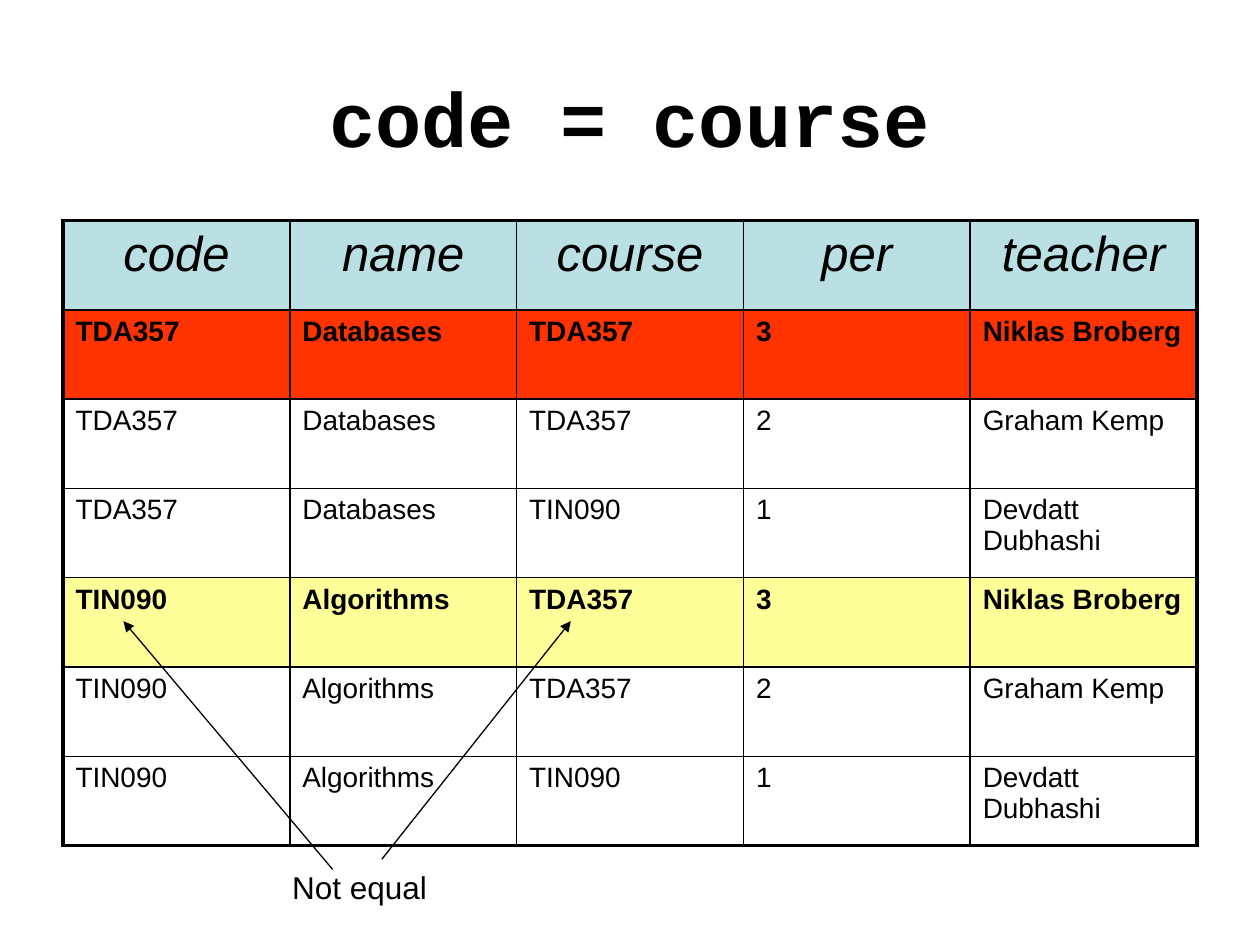
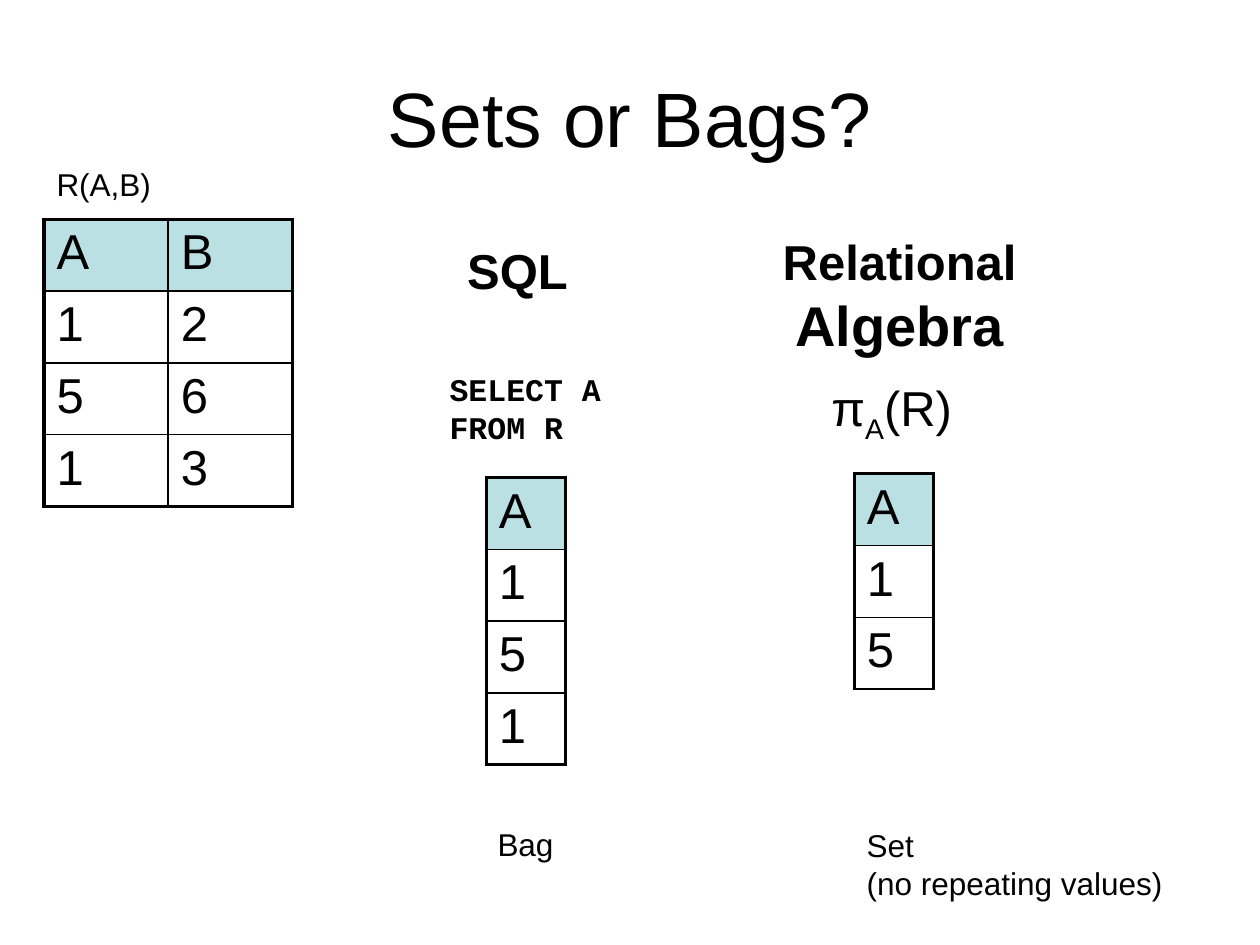
import pptx
import pptx.util
import pptx.dml.color
import pptx.enum.text
import pptx.enum.shapes
import pptx.oxml.ns
import lxml.etree

RGB = pptx.dml.color.RGBColor
ALIGN = pptx.enum.text.PP_ALIGN
ANCHOR = pptx.enum.text.MSO_ANCHOR

# Shared look
BLACK = RGB(0x00, 0x00, 0x00)
WHITE = RGB(0xFF, 0xFF, 0xFF)
TEAL = RGB(0xBB, 0xE0, 0xE3)
RED = RGB(0xFF, 0x33, 0x00)
YELLOW = RGB(0xFF, 0xFF, 0x99)
SANS, MONO = "Arial", "Courier New"
HEAVY, THIN = 2.25, 1

# Grid: 100 columns by 75 rows of square units
WIDE, HIGH = pptx.util.Inches(10), pptx.util.Inches(7.5)
UNIT = WIDE // 100
TITLE = (5, 3, 90, 12.5)

# Slide 1: every course paired with every teaching period
HEAD = ["code", "name", "course", "per", "teacher"]
COURSES = [("TDA357", "Databases"), ("TIN090", "Algorithms")]
GIVEN = [
    ("TDA357", "3", "Niklas Broberg"),
    ("TDA357", "2", "Graham Kemp"),
    ("TIN090", "1", "Devdatt Dubhashi"),
]
PAIRS = [HEAD] + [[*course, *given] for course in COURSES for given in GIVEN]
MARKS = {1: RED, 4: YELLOW}
ARROWS = [((26.4, 69), (9.8, 49.3)), ((30.3, 68.2), (45.3, 49.3))]

# Slide 2: tables as (left, top, column width, rows, bottom line)
LISTS = [
    (3.5, 17.4, 9.85, ["AB", "12", "56", "13"], HEAVY),
    (38.6, 37.9, 6.3, ["A", "1", "5", "1"], HEAVY),
    (67.8, 37.6, 6.3, ["A", "1", "5"], THIN),
]
# Labels as (box, paragraphs of runs, look)
LABELS = [
    ((3.5, 12.6, 9.5, 4), [["R(A,B)"]], {}),
    ((34.7, 28.9, 14, 7.1), [["SELECT A\vFROM R"]], {"font": MONO, "bold": True}),
    ((65, 29.5, 11.9, 5.7), [["π", ("A", {"base": -25}), "(R)"]], {"size": 28}),
    ((38.5, 65, 6.5, 4), [["Bag"]], {}),
    ((67.8, 65.1, 25.7, 7.1), [["Set"], ["(no repeating values)"]], {}),
    ((36.1, 18.6, 10.1, 5.7), [["SQL"]], {"size": 28, "bold": True}),
    ((61, 17.9, 20.8, 11.1), [["Relational"], [("Algebra", {"size": 32})]],
     {"size": 28, "bold": True, "align": ALIGN.CENTER}),
]


def grid(*spans):
    return [round(span * UNIT) for span in spans]


def style(run, font=SANS, size=18, bold=False, slant=False, base=0):
    face = run.font
    face.name, face.size = font, pptx.util.Pt(size)
    face.bold, face.italic = bold, slant
    face.color.rgb = BLACK
    if base:
        run._r.get_or_add_rPr().set("baseline", str(base * 1000))


def write(frame, paras, align=ALIGN.LEFT, **look):
    for i, parts in enumerate(paras):
        para = frame.add_paragraph() if i else frame.paragraphs[0]
        para.alignment = align
        for part in parts:
            text, extra = (part, {}) if isinstance(part, str) else part
            for j, line in enumerate(text.split("\v")):
                if j:
                    para.add_line_break()
                run = para.add_run()
                run.text = line
                style(run, **{**look, **extra})


def label(slide, box, paras, **look):
    frame = slide.shapes.add_textbox(*grid(*box)).text_frame
    frame.word_wrap = False
    frame.auto_size = pptx.enum.text.MSO_AUTO_SIZE.SHAPE_TO_FIT_TEXT
    write(frame, paras, **look)


def title(slide, text, **look):
    frame = slide.shapes.add_textbox(*grid(*TITLE)).text_frame
    frame.word_wrap = True
    frame.vertical_anchor = ANCHOR.MIDDLE
    write(frame, [[text]], align=ALIGN.CENTER, size=44, **look)


def border(cell, widths):
    # Side lines come ahead of the fill in the cell's properties
    props = cell._tc.get_or_add_tcPr()
    for i, (side, width) in enumerate(zip("LRTB", widths)):
        line = pptx.oxml.parse_xml(
            f'<a:ln{side} {pptx.oxml.ns.nsdecls("a")} w="{pptx.util.Pt(width)}">'
            f'<a:solidFill><a:srgbClr val="{BLACK}"/></a:solidFill></a:ln{side}>')
        props.insert(i, line)


def table(slide, left, top, wide, high, rows, look, end=HEAVY, marks=None):
    """Draw rows with a teal head; look(row) gives the text style."""
    count, cols = len(rows), len(rows[0])
    box = grid(left, top, wide * cols, high * count)
    tab = slide.shapes.add_table(count, cols, *box).table
    tab.first_row = tab.horz_banding = False
    fills = {0: TEAL, **(marks or {})}
    for col in tab.columns:
        col.width = grid(wide)[0]
    for r, row in enumerate(rows):
        tab.rows[r].height = grid(high)[0]
        for c, text in enumerate(row):
            cell = tab.cell(r, c)
            cell.fill.solid()
            cell.fill.fore_color.rgb = fills.get(r, WHITE)
            border(cell, (
                THIN if c else HEAVY,
                HEAVY if c == cols - 1 else THIN,
                THIN if r else HEAVY,
                end if r == count - 1 else THIN,
            ))
            write(cell.text_frame, [[text]], **look(r))


def arrow(slide, start, stop):
    kind = pptx.enum.shapes.MSO_CONNECTOR.STRAIGHT
    link = slide.shapes.add_connector(kind, *grid(*start, *stop))
    link.line.color.rgb = BLACK
    link.line.width = pptx.util.Pt(0.75)
    tip = pptx.oxml.ns.qn("a:tailEnd")
    lxml.etree.SubElement(link.line._get_or_add_ln(), tip, type="triangle")
    lxml.etree.SubElement(link._element.spPr, pptx.oxml.ns.qn("a:effectLst"))


def pair_look(row):
    if row == 0:
        return {"size": 28, "slant": True, "align": ALIGN.CENTER}
    return {"size": 16, "bold": row in MARKS}


def list_look(row):
    return {"size": 28}


def main():
    deck = pptx.Presentation()
    deck.slide_width, deck.slide_height = WIDE, HIGH
    blank = deck.slide_layouts[6]

    # Slide 1
    slide = deck.slides.add_slide(blank)
    title(slide, "code = course", font=MONO, bold=True)
    table(slide, 5, 17.5, 18, 7.09, PAIRS, pair_look, marks=MARKS)
    label(slide, (22.2, 68.4, 12.7, 4), [["Not equal"]])
    for start, stop in ARROWS:
        arrow(slide, start, stop)

    # Slide 2
    slide = deck.slides.add_slide(blank)
    title(slide, "Sets or Bags?")
    for left, top, wide, rows, end in LISTS:
        table(slide, left, top, wide, 5.7, rows, list_look, end)
    for box, paras, look in LABELS:
        label(slide, box, paras, **look)

    deck.save("out.pptx")


if __name__ == "__main__":
    main()
